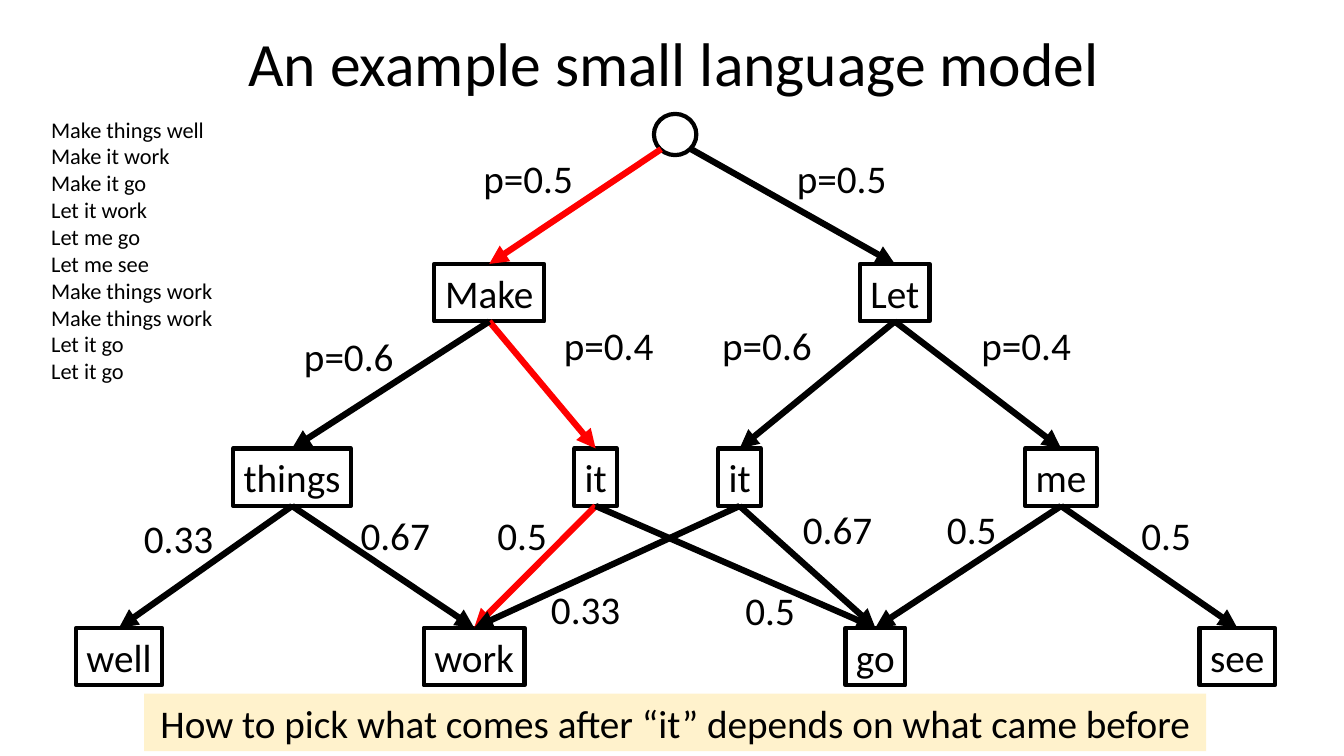
from lxml import etree
from pptx import Presentation
from pptx import util as u
from pptx.dml.color import RGBColor
from pptx.enum import shapes, text
from pptx.oxml import ns

COLOURS = {"ink": "000000", "chosen": "FF0000", "banner": "FFF2CC"}
NODE_HEIGHT = 1.45
ROW_TOPS = {"first": 6.65, "second": 11.3, "third": 15.82}
NODES = {
    "make": ("Make", "first", 12.33, 2.77),
    "let": ("Let", "first", 22.55, 1.75),
    "things": ("things", "second", 7.36, 2.97),
    "make it": ("it", "second", 15.01, 1.07),
    "let it": ("it", "second", 18.64, 1.07),
    "me": ("me", "second", 26.74, 1.8),
    "well": ("well", "third", 3.0, 2.16),
    "work": ("work", "third", 11.95, 2.54),
    "go": ("go", "third", 22.06, 1.5),
    "see": ("see", "third", 31.18, 1.9),
}
ROOT_BOX = (16.48, 2.87, 1.07, 1.04)
ROOT_EDGES = [((16.66, 3.76), "make", "chosen"), ((17.42, 3.76), "let", "ink")]
EDGES = [
    ("let", "let it", "ink"),
    ("let it", "go", "ink"),
    ("make it", "work", "chosen"),
    ("make", "make it", "chosen"),
    ("make", "things", "ink"),
    ("things", "work", "ink"),
    ("things", "well", "ink"),
    ("let", "me", "ink"),
    ("me", "go", "ink"),
    ("me", "see", "ink"),
    ("let it", "work", "ink"),
    ("make it", "go", "ink"),
]
PROBABILITIES = {
    "p=0.5": [(13.31, 3.76), (21.21, 3.76)],
    "p=0.6": [(8.79, 8.26), (19.33, 7.98)],
    "p=0.4": [(15.34, 7.98), (25.86, 7.98)],
    "0.67": [(9.96, 12.75), (21.11, 12.6)],
    "0.5": [(13.16, 12.75), (19.41, 14.66), (24.49, 12.6), (29.39, 12.75)],
    "0.33": [(4.5, 12.83), (14.76, 14.63)],
}
SENTENCES = [
    "Make things well", "Make it work", "Make it go", "Let it work", "Let me go",
    "Let me see", "Make things work", "Make things work", "Let it go", "Let it go",
]


def apply(target, values):
    for name, value in values.items():
        setattr(target, name, value)


class Diagram:
    font = {"name": "Calibri"}
    frame = {"word_wrap": False, "auto_size": text.MSO_AUTO_SIZE.SHAPE_TO_FIT_TEXT}

    def __init__(self, presentation):
        self.slide = presentation.slides.add_slide(presentation.slide_layouts[5])

    def place(self, shape, box):
        names = ("left", "top", "width", "height")
        apply(shape, {name: u.Cm(length) for name, length in zip(names, box)})

    def fill_text(self, shape, lines, size, alignment=text.PP_ALIGN.CENTER, spacing=None):
        shape.text_frame.text = "\n".join(lines)
        for paragraph in shape.text_frame.paragraphs:
            apply(paragraph, {"alignment": alignment, "line_spacing": spacing})
            apply(paragraph.runs[0].font, {**self.font, "size": u.Pt(size)})
            paragraph.runs[0].font.color.rgb = RGBColor.from_string(COLOURS["ink"])

    def stroke(self, line, colour, width):
        line.color.rgb = RGBColor.from_string(COLOURS[colour])
        line.width = u.Pt(width)

    def title(self, wording, box):
        title = self.slide.shapes.title
        self.place(title, box)
        title.text_frame.vertical_anchor = text.MSO_ANCHOR.MIDDLE
        self.fill_text(title, [wording], 44, spacing=0.9)

    def outline(self, kind, box):
        shape = self.slide.shapes.add_shape(kind, *map(u.Cm, box))
        shape.shadow.inherit = False
        shape.fill.background()
        self.stroke(shape.line, "ink", 3)
        return shape

    def node(self, wording, row, centre, width):
        box = (centre - width / 2, ROW_TOPS[row], width, NODE_HEIGHT)
        shape = self.outline(shapes.MSO_SHAPE.RECTANGLE, box)
        apply(shape.text_frame, self.frame)
        self.fill_text(shape, [wording], 28)
        return shape

    def banner(self, wording, box):
        shape = self.outline(shapes.MSO_SHAPE.RECTANGLE, box)
        shape.fill.solid()
        shape.fill.fore_color.rgb = RGBColor.from_string(COLOURS["banner"])
        shape.line.fill.background()
        apply(shape.text_frame, self.frame)
        self.fill_text(shape, [wording], 28)

    def label(self, lines, box, size, alignment=text.PP_ALIGN.CENTER):
        shape = self.slide.shapes.add_textbox(*map(u.Cm, box))
        apply(shape.text_frame, self.frame)
        self.fill_text(shape, lines, size, alignment)

    def arrow(self, start, target, colour):
        connector = self.slide.shapes.add_connector(
            shapes.MSO_CONNECTOR.STRAIGHT, *map(u.Cm, start), 0, 0)
        connector.end_connect(target, 0)
        self.stroke(connector.line, colour, 4.5)
        properties = connector.element.spPr
        line = properties.find(ns.qn("a:ln"))
        etree.SubElement(line, ns.qn("a:tailEnd"), type="triangle")
        etree.SubElement(properties, ns.qn("a:effectLst"))
        return connector

    def edge(self, source, target, colour):
        self.arrow((0, 0), target, colour).begin_connect(source, 2)


def main():
    presentation = Presentation()
    apply(presentation, {"slide_width": u.Cm(33.87), "slide_height": u.Cm(19.05)})
    diagram = Diagram(presentation)
    diagram.title("An example small language model", (0.05, 0.05, 33.87, 3.23))
    nodes = {key: diagram.node(*values) for key, values in NODES.items()}
    diagram.outline(shapes.MSO_SHAPE.OVAL, ROOT_BOX)
    for start, target, colour in ROOT_EDGES:
        diagram.arrow(start, nodes[target], colour)
    for source, target, colour in EDGES:
        diagram.edge(nodes[source], nodes[target], colour)
    for wording, places in PROBABILITIES.items():
        width = 0.27 + 0.5 * len(wording)
        for centre, top in places:
            diagram.label([wording], (centre - width / 2, top, width, NODE_HEIGHT), 28)
    diagram.label(SENTENCES, (1.04, 2.79, 4.62, 7.09), 16, text.PP_ALIGN.LEFT)
    diagram.banner("How to pick what comes after “it” depends on what came before",
                   (3.63, 17.48, 26.77, NODE_HEIGHT))
    presentation.save("out.pptx")


if __name__ == "__main__":
    main()
